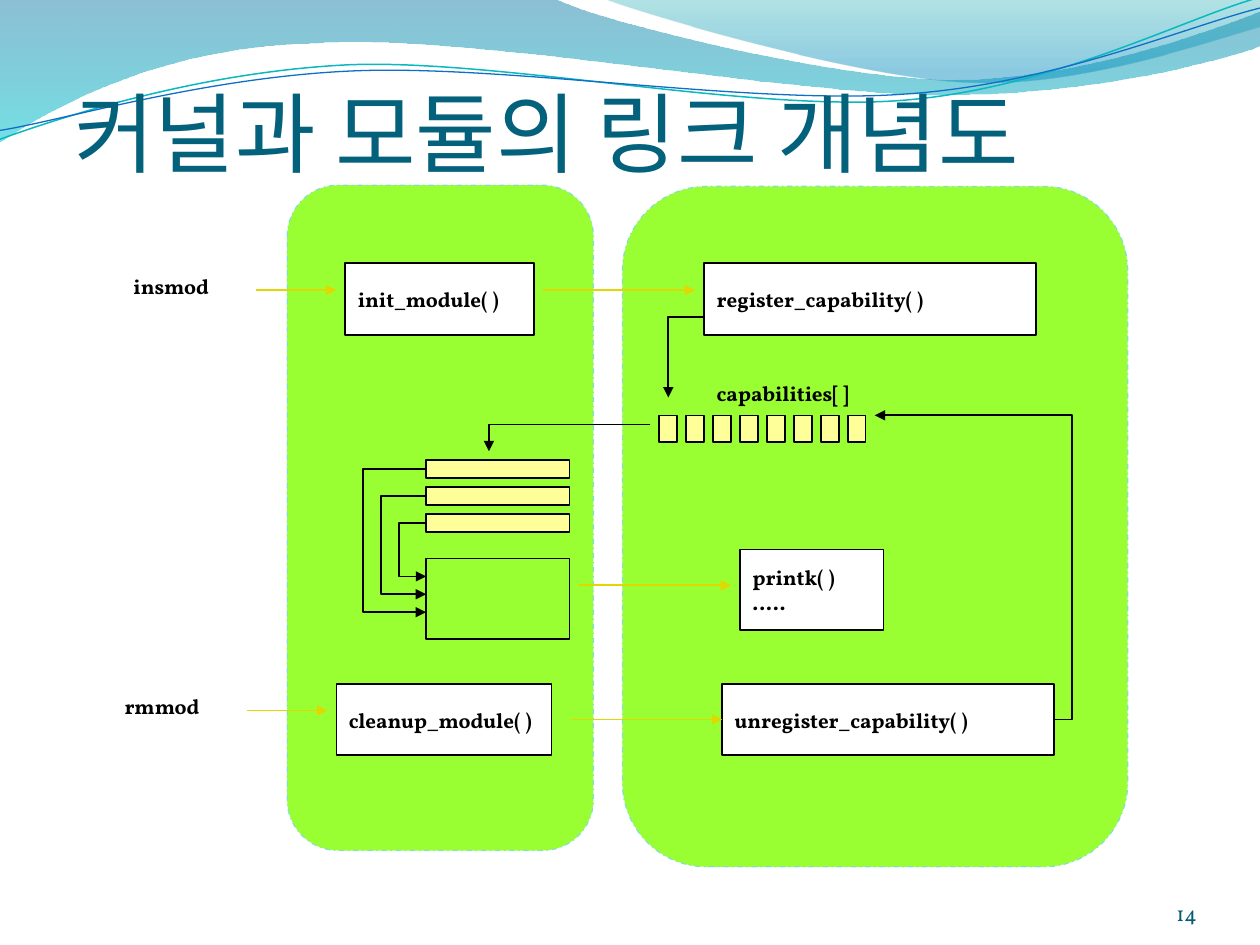
import lxml.etree
import pptx
import pptx.dml.color
import pptx.enum.dml
import pptx.enum.shapes
import pptx.enum.text
import pptx.oxml.ns
import pptx.util

Inches, Pt, qn = pptx.util.Inches, pptx.util.Pt, pptx.oxml.ns.qn
rgb = pptx.dml.color.RGBColor.from_string
MSO_SHAPE = pptx.enum.shapes.MSO_SHAPE
ANCHOR = pptx.enum.text.MSO_ANCHOR
ALIGN = pptx.enum.text.PP_ALIGN


def paint(shape, fill=None, line=None, width=1, arrow=False):
    if hasattr(shape, "fill"):
        shape.shadow.inherit = False
        if fill:
            shape.fill.solid()
            shape.fill.fore_color.rgb = rgb(fill)
        else:
            shape.fill.background()
    if line:
        shape.line.color.rgb = rgb(line)
        shape.line.width = Pt(width)
    else:
        shape.line.fill.background()
    if arrow:
        outline = shape._element.spPr.find(qn("a:ln"))
        lxml.etree.SubElement(outline, qn("a:tailEnd"), type="triangle")


def write(shape, text, size, font, color, bold=False, align=ALIGN.LEFT,
          anchor=ANCHOR.MIDDLE, wrap=False):
    frame = shape.text_frame
    frame.text = text
    frame.word_wrap = wrap
    frame.vertical_anchor = anchor
    for paragraph in frame.paragraphs:
        paragraph.alignment = align
        for run in paragraph.runs:
            run.font.size = Pt(size)
            run.font.name = font
            run.font.bold = bold
            run.font.color.rgb = rgb(color)


deck = pptx.Presentation()
deck.slide_width, deck.slide_height = Inches(10), Inches(7.5)
slide = deck.slides.add_slide(deck.slide_layouts[5])
shapes = slide.shapes

waves = [
    ("LCCLCCCL",
     [(0, 0), (4.4, -0.01),
      (4.76, 0.17), (6.64, 0.63), (7.58, 0.63), (8.53, 0.63), (9.58, 0.26), (10, 0.09),
      (10.01, 0.36),
      (9.83, 0.44), (8.7, 0.76), (7.46, 0.75), (6.22, 0.75), (3.82, 0.28), (2.57, 0.34),
      (1.29, 0.36), (0.46, 0.83), (-0.01, 1.13), (0, 0)],
     [(0, "0074A1", 45), (1, "00C6CF", 55)], None, 0, 0),
    ("CCLL",
     [(4.79, -0.01),
      (5.09, 0.11), (6.82, 0.62), (7.69, 0.65), (8.56, 0.69), (9.61, 0.32), (10, 0.21),
      (10, 0), (4.79, -0.01)],
     [(0, "00A1A9", 30), (0.8, "008BBF", 45)], None, 0, 0),
    ("CCC",
     [(-0.02, 0.87), (0.47, 0.72), (1.58, 0.41), (2.78, 0.41), (3.96, 0.42), (5.91, 0.93),
      (7.12, 0.9), (8.32, 0.87), (9.4, 0.36), (10, 0.22)],
     None, "0AB8BF", 0.85, 357.3),
    ("CCC",
     [(-0.02, 0.8), (0.46, 0.75), (1.64, 0.45), (2.83, 0.46), (4.03, 0.47), (5.96, 0.88),
      (7.16, 0.85), (8.35, 0.83), (9.42, 0.42), (10.02, 0.3)],
     None, "0F6FC6", 0.75, 357.3),
]
for commands, points, stops, stroke, width, turn in waves:
    points = [(Inches(x), Inches(y)) for x, y in points]
    builder = shapes.build_freeform(*points[0])
    builder.add_line_segments(points[1:], close=bool(stops))
    wave = builder.convert_to_shape()
    segments = iter(list(wave._element.iter(qn("a:lnTo"))))
    for command in commands:
        segment = next(segments)
        if command == "C":
            bend = lxml.etree.Element(qn("a:cubicBezTo"))
            segment.addprevious(bend)
            for part in (segment, next(segments), next(segments)):
                bend.append(part[0])
                part.getparent().remove(part)
    wave.rotation = turn
    paint(wave, None, stroke, width)
    if stops:
        wave.fill.gradient()
        wave.fill.gradient_angle = 270
        for stop, (position, color, opacity) in zip(wave.fill.gradient_stops, stops):
            stop.position = position
            stop.color.rgb = rgb(color)
            tint = stop._gs.find(qn("a:srgbClr"))
            lxml.etree.SubElement(tint, qn("a:alpha"), val=str(opacity * 1000))

title = shapes.title
shapes._spTree.append(title._element)
title.left, title.top, title.width, title.height = map(Inches, (0.59, 0.21, 9, 1.25))
write(title, "커널과 모듈의 링크 개념도", 50, "Calibri", "04617B", anchor=ANCHOR.BOTTOM, wrap=True)
number = shapes.add_textbox(*map(Inches, (8.67, 6.95, 0.83, 0.4)))
write(number, "14", 12, "Vollkorn", "045D75", align=ALIGN.RIGHT, anchor=ANCHOR.BOTTOM, wrap=True)
for label, top_inset in ((title, 0.05), (number, 0)):
    frame = label.text_frame
    frame.auto_size = pptx.enum.text.MSO_AUTO_SIZE.NONE
    frame.margin_left = frame.margin_right = frame.margin_bottom = 0
    frame.margin_top = Inches(top_inset)

for area in ((2.28, 1.47, 2.43, 5.28), (4.94, 1.48, 4.01, 5.4)):
    panel = shapes.add_shape(MSO_SHAPE.ROUNDED_RECTANGLE, *map(Inches, area))
    paint(panel, "99FF33", "85DFD0", 0.75)
    panel.line.dash_style = pptx.enum.dml.MSO_LINE.DASH_DOT

left, top = Inches(0.89), Inches(2.09)
column, row = Inches(0.0712), Inches(0.071)

boxes = [
    (26, 0, 21, 8, "FFFFFF", "000000", "init_module( )"),
    (1, 0, 16, 5, "FFFFFF", None, "insmod"),
    (66, 0, 37, 8, "FFFFFF", "000000", "register_capability( )"),
    (66, 12, 16, 5, "99FF33", None, "capabilities[ ]"),
    (35, 33, 16, 9, "99FF33", "000000", ""),
    (70, 32, 16, 9, "FFFFFF", "000000", "printk( )\n….."),
    (25, 47, 24, 8, "FFFFFF", "000000", "cleanup_module( )"),
    (68, 47, 37, 8, "FFFFFF", "000000", "unregister_capability( )"),
    (0, 47, 16, 5, "FFFFFF", None, "rmmod"),
]
boxes += [(61 + 3 * i, 17, 2, 3, "FFFF99", "000000", "") for i in range(8)]
boxes += [(35, 22 + 3 * i, 16, 2, "FFFF99", "000000", "") for i in range(3)]
for x, y, wide, high, fill, line, text in boxes:
    box = shapes.add_shape(MSO_SHAPE.RECTANGLE, left + x * column, top + y * row,
                           wide * column, high * row)
    paint(box, fill, line)
    if text:
        write(box, text, 12, "Vollkorn", "000000", bold=True)

calls = [(16, 25, 3), (48, 65, 3), (15, 24, 50), (52, 69, 36), (51, 68, 51)]
for begin, end, y in calls:
    call = shapes.add_connector(pptx.enum.shapes.MSO_CONNECTOR.STRAIGHT,
                                left + begin * column, top + y * row,
                                left + end * column, top + y * row)
    paint(call, None, "E2D700", arrow=True)
    lxml.etree.SubElement(call._element.spPr, qn("a:effectLst"))

links = [
    [(66, 6), (62, 6), (62, 15)],
    [(60, 18), (42, 18), (42, 21)],
    [(105, 51), (107, 51), (107, 17), (85, 17)],
]
links += [[(35, 29 - 3 * i), (32 - 2 * i, 29 - 3 * i), (32 - 2 * i, 35 + 2 * i), (35, 35 + 2 * i)]
          for i in range(3)]
for link in links:
    corners = [(left + x * column, top + y * row) for x, y in link]
    builder = shapes.build_freeform(*corners[0])
    builder.add_line_segments(corners[1:], close=False)
    paint(builder.convert_to_shape(), None, "000000", arrow=True)

deck.save("out.pptx")
